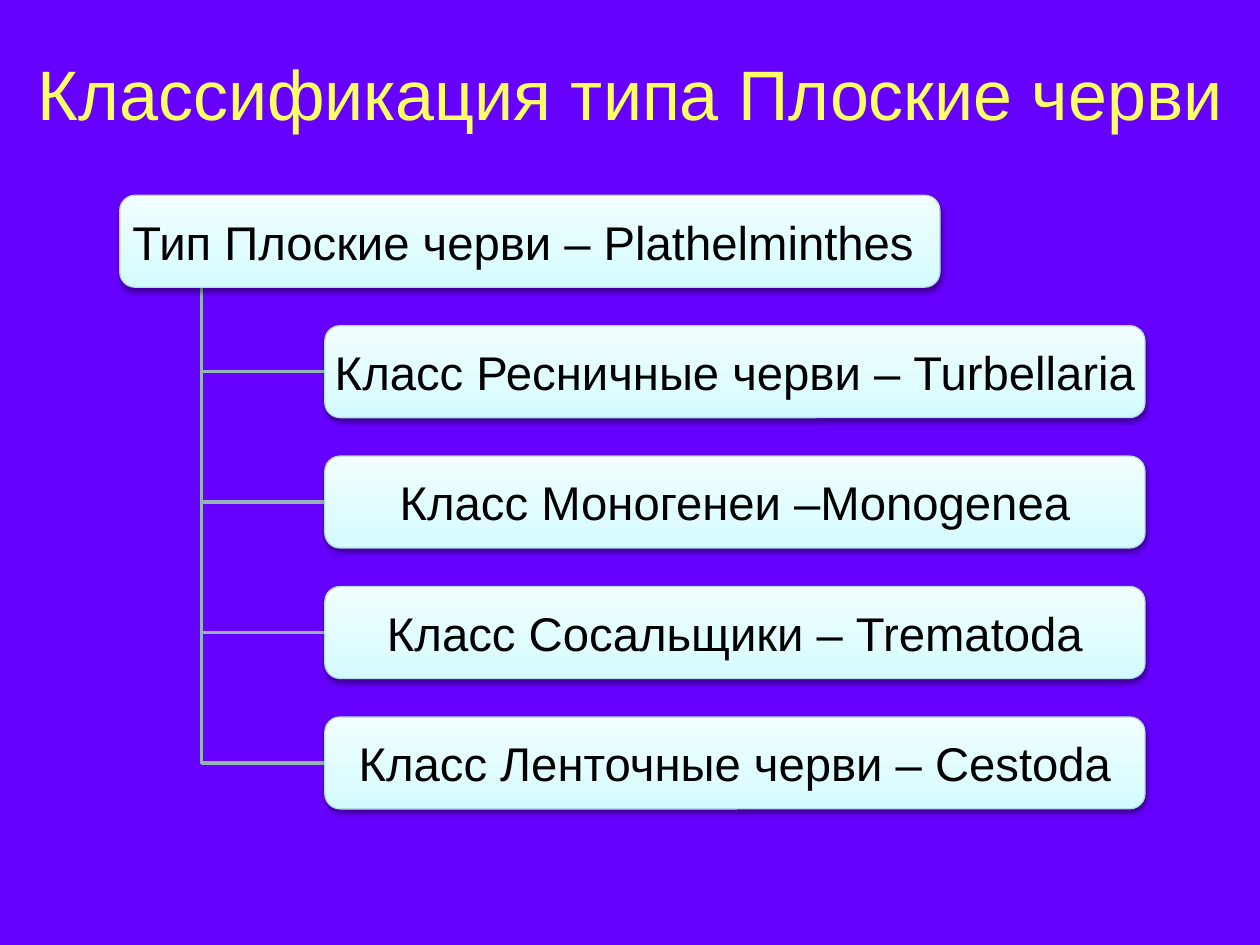
"""Builds the slide that sorts the flatworm phylum into its classes."""
import copy
from dataclasses import dataclass

import pptx
import pptx.dml.color
import pptx.enum.shapes
import pptx.enum.text
import pptx.oxml
import pptx.oxml.ns
import pptx.util


@dataclass(frozen=True)
class Theme:
    back: str = "6600FF"
    title: str = "FFFF66"
    text: str = "000000"
    edge: str = "B6DCDF"
    link: str = "96B3B6"
    fade: tuple = ((0, "D3FBFF"), (0.35, "DFFCFF"), (1, "F2FEFF"))
    font: str = "Arial"
    head: int = 40
    body: int = 27


@dataclass(frozen=True)
class Grid:
    left: float = 0.95
    top: float = 1.55
    wide: float = 6.51
    tall: float = 0.73
    step: float = 4.14 / 4
    stem: float = 0.1
    dent: float = 0.25

    def col(self, share: float) -> float:
        return self.left + share * self.wide

    def row(self, index: int, share: float = 0) -> float:
        return self.top + index * self.step + share * self.tall


@dataclass(frozen=True)
class Node:
    text: str
    row: int
    dent: float


THEME = Theme()
GRID = Grid()
ROOT = Node("Тип Плоские черви – Plathelminthes ", 0, 0)
NAMES = (
    "Класс Ресничные черви – Turbellaria",
    "Класс Моногенеи –Monogenea",
    "Класс Сосальщики – Trematoda",
    "Класс Ленточные черви – Cestoda",
)
KIDS = [Node(name, row, GRID.dent) for row, name in enumerate(NAMES, 1)]
SHADE = (
    f'<a:outerShdw {pptx.oxml.ns.nsdecls("a")} blurRad="40000" dist="20000" '
    'dir="5400000" rotWithShape="0"><a:srgbClr val="000000">'
    '<a:alpha val="38000"/></a:srgbClr></a:outerShdw>'
)


def inch(*sizes: float) -> list:
    return [pptx.util.Inches(size) for size in sizes]


def tint(code: str) -> pptx.dml.color.RGBColor:
    return pptx.dml.color.RGBColor.from_string(code)


def apply(item, form: dict) -> None:
    for key, value in form.items():
        setattr(item, key, value)


def write(shape, text: str, size: int, hue: str, pad: float) -> None:
    frame = shape.text_frame
    sides = ("margin_left", "margin_right", "margin_top", "margin_bottom")
    apply(frame, dict.fromkeys(sides, pptx.util.Inches(pad)))
    apply(frame, {
        "word_wrap": True,
        "vertical_anchor": pptx.enum.text.MSO_ANCHOR.MIDDLE,
    })
    para = frame.paragraphs[0]
    para.alignment = pptx.enum.text.PP_ALIGN.CENTER
    run = para.add_run()
    run.text = text
    apply(run.font, {"name": THEME.font, "size": pptx.util.Pt(size)})
    run.font.color.rgb = tint(hue)


def trace(shape, hue: str, width: float) -> None:
    shape.shadow.inherit = False
    shape.line.color.rgb = tint(hue)
    shape.line.width = pptx.util.Pt(width)


def link(slide, kid: Node) -> None:
    stem, mid = inch(GRID.col(GRID.stem), GRID.row(kid.row, 0.5))
    start, end = inch(GRID.row(0, 1), GRID.col(kid.dent))
    pen = slide.shapes.build_freeform(stem, start)
    pen.add_line_segments([(stem, mid), (end, mid)], close=False)
    shape = pen.convert_to_shape()
    shape.fill.background()
    trace(shape, THEME.link, 2)


def card(slide, node: Node) -> None:
    shape = slide.shapes.add_shape(
        pptx.enum.shapes.MSO_SHAPE.ROUNDED_RECTANGLE,
        *inch(GRID.col(node.dent), GRID.row(node.row), GRID.wide, GRID.tall),
    )
    shape.fill.gradient()
    shape.fill.gradient_angle = 90
    props = shape._element.spPr
    stops = next(props.iter(pptx.oxml.ns.qn("a:gsLst")))
    stops.insert(1, copy.deepcopy(stops[0]))
    for stop, (place, hue) in zip(shape.fill.gradient_stops, THEME.fade):
        stop.position = place
        stop.color.rgb = tint(hue)
    trace(shape, THEME.edge, 0.75)
    glow = props.find(pptx.oxml.ns.qn("a:effectLst"))
    glow.append(pptx.oxml.parse_xml(SHADE))
    write(shape, node.text, THEME.body, THEME.text, 0.02)


def main() -> None:
    deck = pptx.Presentation()
    wide, tall = inch(10, 7.5)
    apply(deck, {"slide_width": wide, "slide_height": tall})
    slide = deck.slides.add_slide(deck.slide_layouts[6])
    fill = slide.background.fill
    fill.solid()
    fill.fore_color.rgb = tint(THEME.back)
    title = slide.shapes.add_textbox(*inch(0, 0.24, 10, 0.99))
    write(title, "Классификация типа Плоские черви", THEME.head, THEME.title, 0.1)
    for kid in reversed(KIDS):
        link(slide, kid)
    for node in (ROOT, *KIDS):
        card(slide, node)
    deck.save("out.pptx")


if __name__ == "__main__":
    main()
